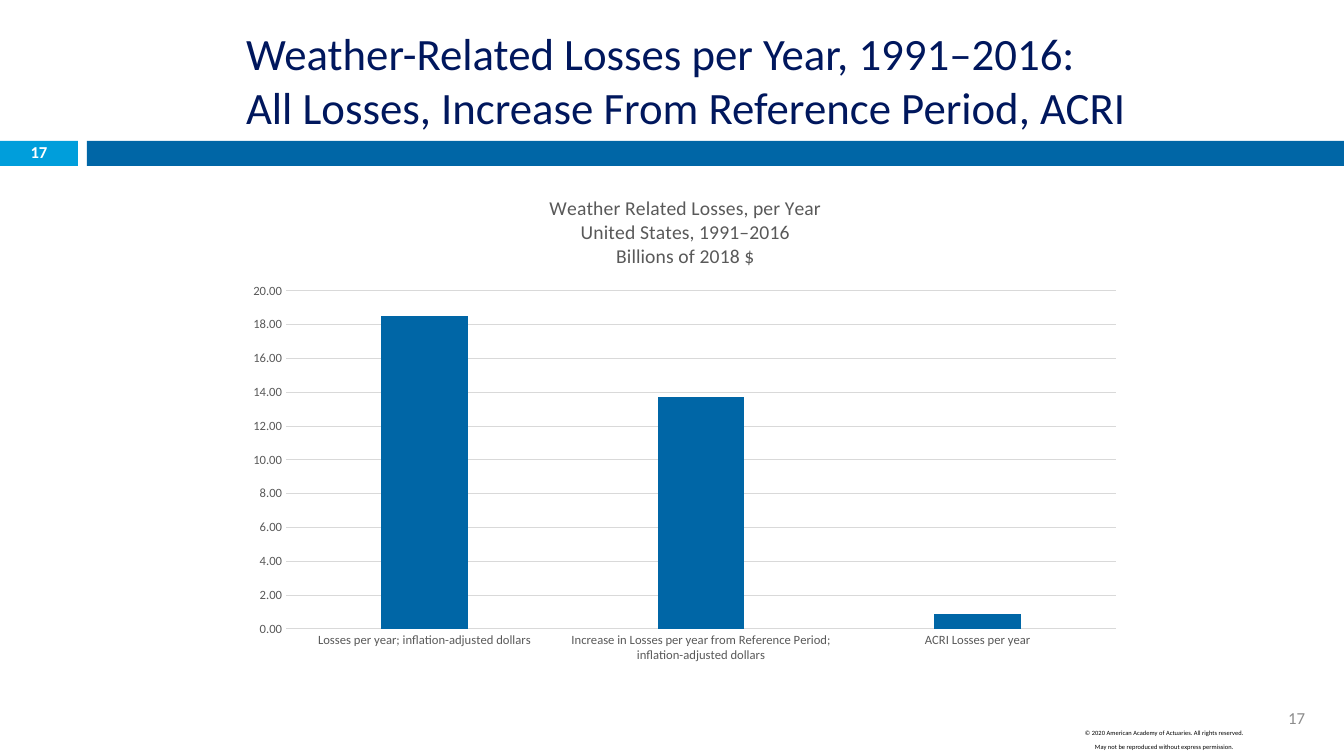
from lxml import etree
from pptx import Presentation
from pptx.chart.data import CategoryChartData
from pptx.dml.color import RGBColor
from pptx.enum.chart import XL_CHART_TYPE as ChartType, XL_TICK_MARK as TickMark
from pptx.enum.shapes import MSO_SHAPE as Shape
from pptx.enum.text import MSO_ANCHOR as Anchor, PP_ALIGN as Align
from pptx.util import Emu, Pt

FONT = "Calibri"
SKY = RGBColor(0x00, 0x9E, 0xDB)
BLUE = RGBColor(0x00, 0x66, 0xA6)
NAVY = RGBColor(0x00, 0x17, 0x5D)
BLACK = RGBColor(0x00, 0x00, 0x00)
WHITE = RGBColor(0xFF, 0xFF, 0xFF)
GREY = RGBColor(0x8C, 0x8C, 0x8C)
LABEL_GREY = RGBColor(0x59, 0x59, 0x59)
GRID_GREY = RGBColor(0xD9, 0xD9, 0xD9)


def px(*lengths):
    """Turn pixels (100.8 to the inch) into EMU."""
    return [Emu(round(length * 914400 / 100.8)) for length in lengths]


def style(font, size, color, bold=False):
    values = {"name": FONT, "size": Pt(size), "bold": bold}
    for name, value in values.items():
        setattr(font, name, value)
    font.color.rgb = color


deck = Presentation()
deck.slide_width, deck.slide_height = px(1344, 756)
page = deck.slides.add_slide(deck.slide_layouts[5])

# Header band
for left, width, color in [(0, 78, SKY), (87, 1257, BLUE)]:
    band = page.shapes.add_shape(Shape.RECTANGLE, *px(left, 141, width, 25))
    band.shadow.inherit = False
    band.fill.solid()
    band.fill.fore_color.rgb = color
    band.line.fill.background()

# Title
title = page.shapes.title
title.left, title.top, title.width, title.height = px(236, 25, 915, 109)
title.text_frame.text = (
    "Weather-Related Losses per Year, 1991–2016:\v"
    "All Losses, Increase From Reference Period, ACRI"
)
title.text_frame.vertical_anchor = Anchor.MIDDLE
para = title.text_frame.paragraphs[0]
para.alignment = Align.LEFT
for span in para.runs:
    style(span.font, 32, NAVY)

# Copyright and page numbers
COPYRIGHT = [
    "© 2020 American Academy of Actuaries. All rights reserved.",
    "May not be reproduced without express permission.",
]
labels = [
    ((1053, 723, 223, 30), COPYRIGHT, 8, BLACK, False, Align.CENTER, Anchor.TOP, 1.0),
    ((1013, 698, 302, 40), ["17"], 12, GREY, False, Align.RIGHT, Anchor.MIDDLE, 1.0),
    ((0, 140, 78, 27), ["17"], 11.9, WHITE, True, Align.CENTER, Anchor.MIDDLE, 0.8),
]
for place, lines, size, color, bold, align, anchor, spacing in labels:
    box = page.shapes.add_textbox(*px(*place))
    frame = box.text_frame
    frame.word_wrap = lines is not COPYRIGHT
    frame.vertical_anchor = anchor
    frame.text = "\n".join(lines)
    for para in frame.paragraphs:
        para.alignment = align
        para.line_spacing = spacing
        span = para.runs[0]
        style(span.font, size, color, bold)
        if lines is COPYRIGHT:
            span._r.get_or_add_rPr().set("baseline", "30000")

# Chart
data = CategoryChartData(number_format="0.00")
data.categories = [
    "Losses per year; inflation-adjusted dollars",
    "Increase in Losses per year from Reference Period; inflation-adjusted dollars",
    "ACRI Losses per year",
]
data.add_series("Series 1", [18.5, 13.7, 0.9])
chart = page.shapes.add_chart(
    ChartType.COLUMN_CLUSTERED, *px(236, 176, 899, 496), data
).chart
style(chart.font, 10, BLACK)
chart.has_legend = False
chart.has_title = True
chart.chart_title.include_in_layout = False
heading = chart.chart_title.text_frame
heading.text = (
    "Weather Related Losses, per Year\nUnited States, 1991–2016\nBillions of 2018 $"
)
for para in heading.paragraphs:
    style(para.runs[0].font, 14, LABEL_GREY)

plot = chart.plots[0]
plot.gap_width, plot.overlap, plot.vary_by_categories = 219, -27, False
columns = plot.series[0].format.fill
columns.solid()
columns.fore_color.rgb = BLUE

categories, values = chart.category_axis, chart.value_axis
for axis in (categories, values):
    axis.major_tick_mark = axis.minor_tick_mark = TickMark.NONE
    style(axis.tick_labels.font, 9, LABEL_GREY)
for line in (categories.format.line, values.major_gridlines.format.line):
    line.color.rgb = GRID_GREY
    line.width = Pt(0.75)
values.format.line.fill.background()
scale = {"minimum_scale": 0, "maximum_scale": 20, "major_unit": 2}
for name, value in scale.items():
    setattr(values, name, value)
values.tick_labels.number_format = "0.00"
values.tick_labels.number_format_is_linked = False

# Fixed inner plot area, as shares of the chart frame
CHART_NS = "http://schemas.openxmlformats.org/drawingml/2006/chart"
area = chart._chartSpace.find(f".//{{{CHART_NS}}}plotArea")
for old in area.findall(f"{{{CHART_NS}}}layout"):
    area.remove(old)
layout = etree.Element(f"{{{CHART_NS}}}layout")
manual = etree.SubElement(layout, f"{{{CHART_NS}}}manualLayout")
settings = {
    "layoutTarget": "inner", "xMode": "edge", "yMode": "edge",
    "x": 50 / 899, "y": 115 / 496, "w": 830 / 899, "h": 338 / 496,
}
for name, value in settings.items():
    etree.SubElement(manual, f"{{{CHART_NS}}}{name}").set("val", str(value))
area.insert(0, layout)

deck.save("out.pptx")
